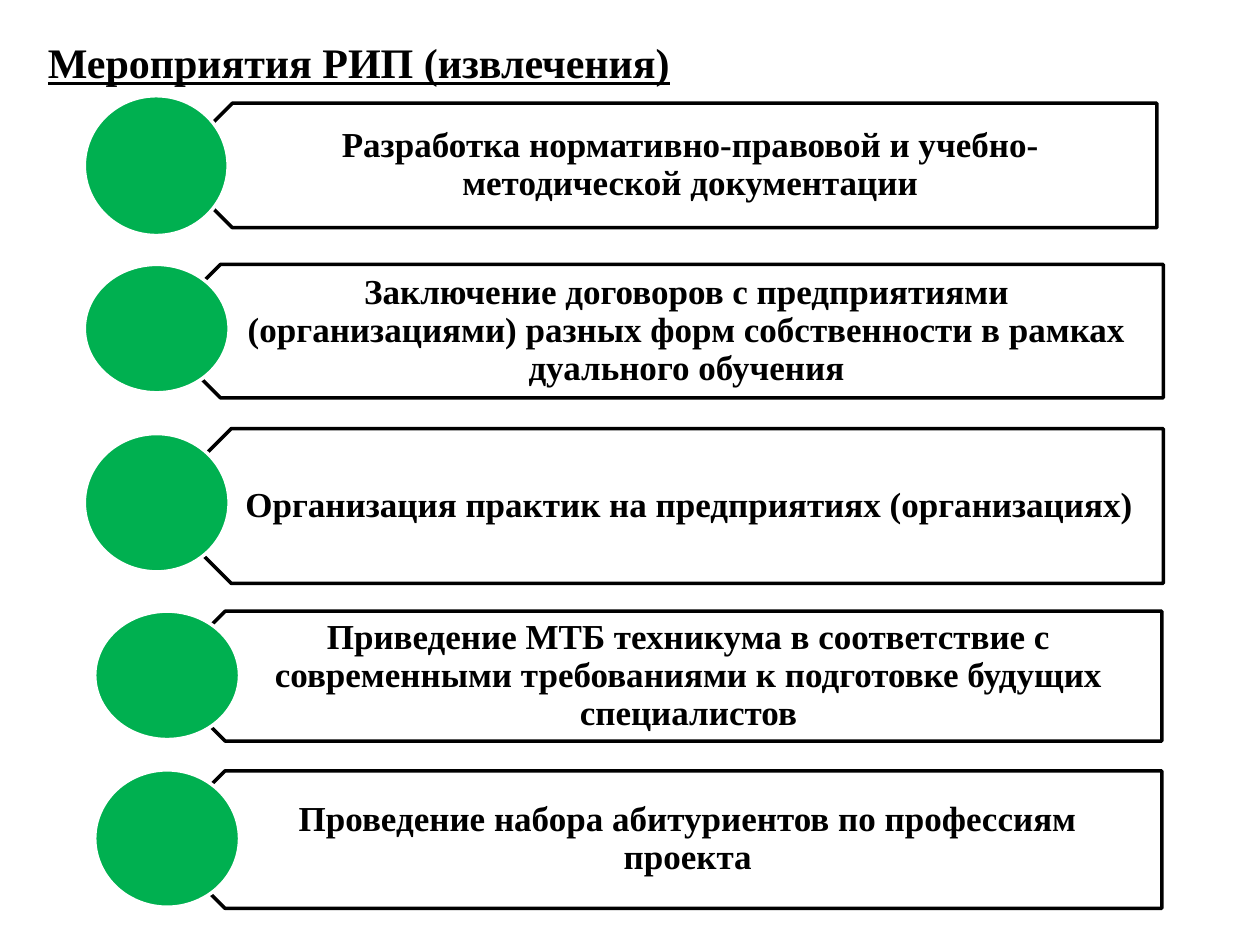
"""Builds the slide listing the project activities."""
from dataclasses import dataclass

from pptx import Presentation
from pptx.dml.color import RGBColor
from pptx.enum.shapes import MSO_SHAPE
from pptx.enum.text import MSO_ANCHOR, PP_ALIGN
from pptx.shapes.autoshape import Shape
from pptx.shapes.group import GroupShape
from pptx.slide import Slide
from pptx.text.text import TextFrame
from pptx.util import Cm, Pt


@dataclass(frozen=True)
class Theme:
    """Colours, font and sizes of the slide."""
    font: str = "Times New Roman"
    ink: RGBColor = RGBColor(0x00, 0x00, 0x00)
    paper: RGBColor = RGBColor(0xFF, 0xFF, 0xFF)
    accent: RGBColor = RGBColor(0x00, 0xB0, 0x50)
    title_size: Pt = Pt(24)
    body_size: Pt = Pt(20)
    line_width: Pt = Pt(2)


@dataclass(frozen=True)
class Activity:
    """One row: a plate with its label and a disc, in centimetres."""
    text: str
    left: float
    top: float
    right: float
    height: float
    text_left: float
    disc_left: float
    disc_top: float
    disc_height: float
    disc_width: float = 2.92


THEME = Theme()
TITLE = "Мероприятия РИП (извлечения)"
ACTIVITIES = (
    Activity("Разработка нормативно-правовой и учебно-методической документации",
             3.43, 2.08, 23.32, 2.51, 4.06, 1.7, 1.93, 2.82, 2.9),
    Activity("Заключение договоров с предприятиями (организациями) разных форм "
             "собственности в рамках дуального обучения",
             3.1, 5.33, 23.45, 2.69, 3.78, 1.7, 5.33, 2.59),
    Activity("Организация практик на предприятиях (организациях)",
             3.1, 8.64, 23.45, 3.12, 3.89, 1.7, 8.74, 2.79),
    Activity("Приведение МТБ техникума в соответствие с современными требованиями "
             "к подготовке будущих специалистов",
             3.23, 12.32, 23.42, 2.62, 3.89, 1.91, 12.32, 2.59),
    Activity("Проведение набора абитуриентов по профессиям проекта",
             3.15, 15.54, 23.42, 2.77, 3.86, 1.91, 15.52, 2.77),
)


def write(frame: TextFrame, text: str, size: Pt, align: PP_ALIGN,
          underline: bool = False) -> None:
    """Set one bold paragraph in a text frame."""
    frame.text = text
    frame.word_wrap = True
    para = frame.paragraphs[0]
    para.alignment = align
    font = para.runs[0].font
    font.name = THEME.font
    font.size = size
    font.bold = True
    font.underline = underline
    font.color.rgb = THEME.ink


def outline(shape: Shape, colour: RGBColor) -> None:
    """Give a shape a plain line without shadow."""
    shape.shadow.inherit = False
    shape.line.color.rgb = colour
    shape.line.width = THEME.line_width


def add_title(page: Slide) -> None:
    """Place and format the title placeholder."""
    title = page.shapes.title
    title.left, title.top = Cm(0.71), Cm(0.74)
    title.width, title.height = Cm(19.35), Cm(1.85)
    write(title.text_frame, TITLE, THEME.title_size, PP_ALIGN.LEFT, underline=True)
    title.text_frame.vertical_anchor = MSO_ANCHOR.TOP
    title.text_frame.margin_top = Cm(0)


def add_activity(group: GroupShape, item: Activity) -> None:
    """Draw the plate, label and disc of one activity."""
    plate = group.shapes.add_shape(
        MSO_SHAPE.PENTAGON, Cm(item.left), Cm(item.top),
        Cm(item.right - item.left), Cm(item.height))
    plate.rotation = 180
    plate.fill.background()
    outline(plate, THEME.ink)

    box = group.shapes.add_textbox(
        Cm(item.text_left), Cm(item.top),
        Cm(item.right - item.text_left), Cm(item.height))
    frame = box.text_frame
    write(frame, item.text, THEME.body_size, PP_ALIGN.CENTER)
    frame.paragraphs[0].line_spacing = 0.9
    frame.vertical_anchor = MSO_ANCHOR.MIDDLE
    frame.margin_left, frame.margin_right = Cm(0.86), Cm(0.41)
    frame.margin_top = frame.margin_bottom = Cm(0.2)

    disc = group.shapes.add_shape(
        MSO_SHAPE.OVAL, Cm(item.disc_left), Cm(item.disc_top),
        Cm(item.disc_width), Cm(item.disc_height))
    disc.fill.solid()
    disc.fill.fore_color.rgb = THEME.accent
    outline(disc, THEME.paper)


def main() -> None:
    """Build and save the deck."""
    deck = Presentation()
    deck.slide_width, deck.slide_height = Cm(25.4), Cm(19.05)
    page = deck.slides.add_slide(deck.slide_layouts[5])
    add_title(page)
    group = page.shapes.add_group_shape()
    for item in ACTIVITIES:
        add_activity(group, item)
    deck.save("out.pptx")


if __name__ == "__main__":
    main()
